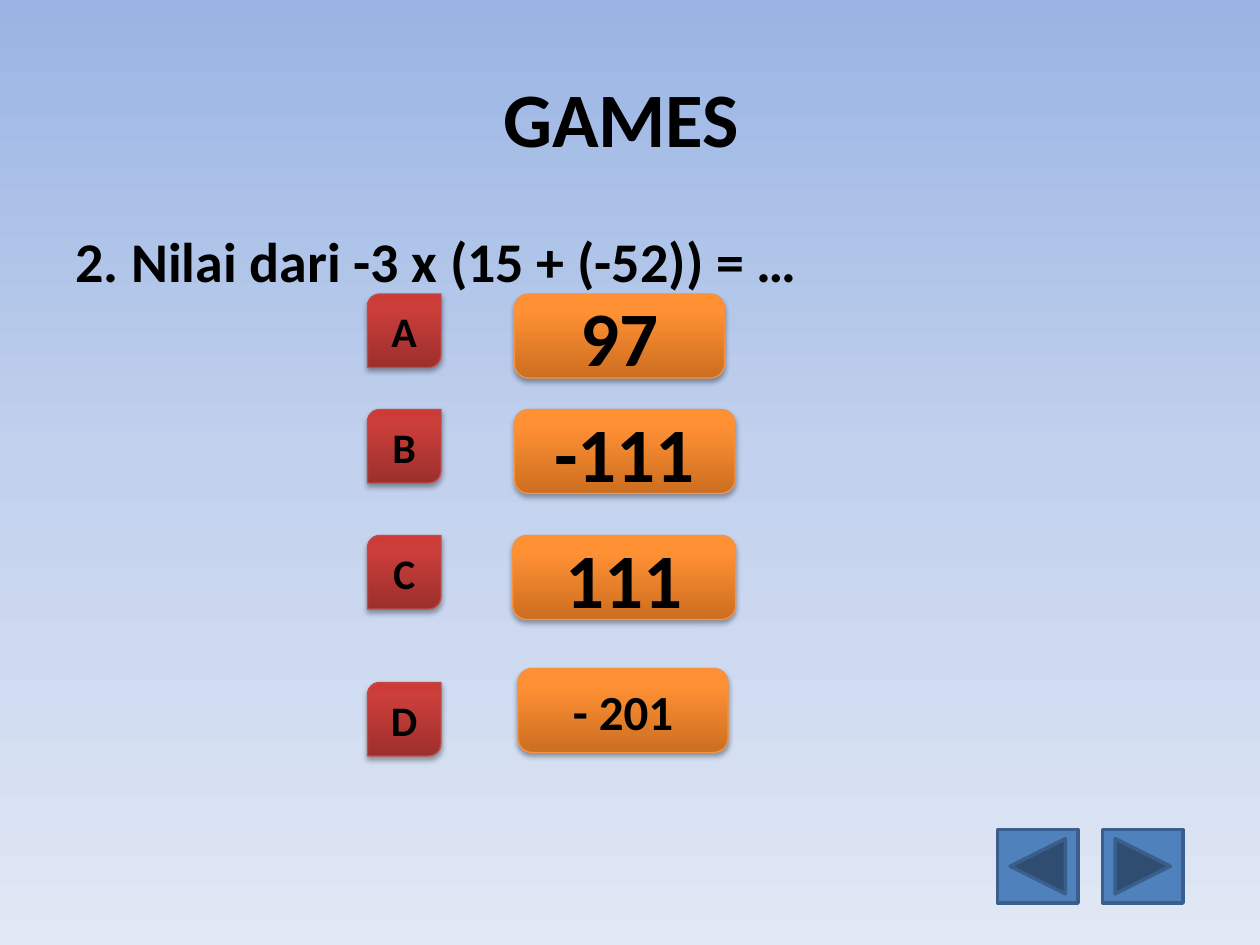
from dataclasses import dataclass

from lxml.etree import SubElement
from pptx import Presentation
from pptx.dml.color import RGBColor
from pptx.enum.shapes import MSO_SHAPE
from pptx.enum.text import MSO_ANCHOR, PP_ALIGN
from pptx.oxml.ns import qn
from pptx.util import Pt


@dataclass(frozen=True)
class Theme:
    font: str = "Calibri"
    text: str = "000000"
    sky: tuple = ((0, "9AB5E4"), (50, "C2D1ED"), (100, "E1E8F5"))
    red: tuple = ((0, "9C2F2D"), (80, "CB3E3A"), (100, "CE3B37"))
    red_line: str = "BF4C48"
    orange: tuple = ((0, "CC6E20"), (80, "FF9034"), (100, "FF9136"))
    orange_line: str = "F69240"
    nav: str = "4F81BD"
    nav_line: str = "3A5F8C"
    title: int = 44
    question: int = 32
    answer: int = 28
    letter: int = 24


T = Theme()


def add_color(parent, value):
    color = SubElement(parent, qn("a:srgbClr"))
    color.set("val", value)
    return color


def set_gradient(fill, element, stops, angle):
    fill.gradient()
    stop_list = element.find(".//" + qn("a:gsLst"))
    for old in list(stop_list):
        stop_list.remove(old)
    for pos, value in stops:
        stop = SubElement(stop_list, qn("a:gs"))
        stop.set("pos", str(pos * 1000))
        add_color(stop, value)
    element.find(".//" + qn("a:lin")).set("ang", str(angle * 60000))


def add_shadow(s):
    s.shadow.inherit = False
    effects = s._element.spPr.find(qn("a:effectLst"))
    shadow = SubElement(effects, qn("a:outerShdw"))
    for key, value in (("blurRad", Pt(3.1)), ("dist", Pt(1.8)), ("dir", 5400000), ("rotWithShape", 0)):
        shadow.set(key, str(value))
    SubElement(add_color(shadow, "000000"), qn("a:alpha")).set("val", "35000")


def write(s, text, size, align=PP_ALIGN.CENTER, anchor=MSO_ANCHOR.MIDDLE):
    tf = s.text_frame
    tf.word_wrap = True
    tf.vertical_anchor = anchor
    p = tf.paragraphs[0]
    p.alignment = align
    r = p.add_run()
    r.text = text
    r.font.name = T.font
    r.font.size = Pt(size)
    r.font.bold = True
    r.font.color.rgb = RGBColor.from_string(T.text)


def set_line(s, color, width):
    s.line.color.rgb = RGBColor.from_string(color)
    s.line.width = Pt(width)


def add_heading(slide, box, text):
    write(slide.shapes.add_textbox(*map(Pt, box)), text, T.title)


def add_question(slide, box, text):
    s = slide.shapes.add_textbox(*map(Pt, box))
    write(s, text, T.question, PP_ALIGN.LEFT, MSO_ANCHOR.TOP)
    props = s.text_frame.paragraphs[0]._p.get_or_add_pPr()
    props.set("marL", str(Pt(40)))
    props.set("indent", str(Pt(-40)))


def add_button(slide, box, kind, stops, line, text, size):
    s = slide.shapes.add_shape(kind, *map(Pt, box))
    set_gradient(s.fill, s._element.spPr, stops, 270)
    set_line(s, line, 0.75)
    add_shadow(s)
    write(s, text, size)


def add_option(slide, letter_box, answer_box, letter, answer, size):
    add_button(slide, letter_box, MSO_SHAPE.ROUND_2_DIAG_RECTANGLE,
               T.red, T.red_line, letter, T.letter)
    add_button(slide, answer_box, MSO_SHAPE.ROUNDED_RECTANGLE,
               T.orange, T.orange_line, answer, size)


def add_navigation(slide, box, gap):
    left, top, width, height = box
    button_width = (width - gap) / 2
    kinds = (MSO_SHAPE.ACTION_BUTTON_BACK_OR_PREVIOUS,
             MSO_SHAPE.ACTION_BUTTON_FORWARD_OR_NEXT)
    for i, kind in enumerate(kinds):
        s = slide.shapes.add_shape(
            kind, Pt(left + i * (button_width + gap)), Pt(top), Pt(button_width), Pt(height))
        s.fill.solid()
        s.fill.fore_color.rgb = RGBColor.from_string(T.nav)
        set_line(s, T.nav_line, 2)
        s.shadow.inherit = False


def main():
    prs = Presentation()
    prs.slide_width, prs.slide_height = Pt(720), Pt(540)
    slide = prs.slides.add_slide(prs.slide_layouts[6])
    set_gradient(slide.background.fill, slide._element, T.sky, 90)
    add_heading(slide, (36, 21.6, 648, 90), "GAMES ")
    add_question(slide, (36, 126, 648, 356.4), "2. Nilai dari -3 x (15 + (-52)) = …")
    options = (
        ("A", 168, "97", (294, 168, 120, 48), T.title),
        ("B", 234, "-111", (294, 234, 126, 48), T.title),
        ("C", 306, "111", (293, 306, 127.4, 48), T.title),
        ("D", 390, "- 201", (296, 382, 120, 48), T.answer),
    )
    for letter, top, answer, answer_box, size in options:
        add_option(slide, (210, top, 42, 42), answer_box, letter, answer, size)
    add_navigation(slide, (570, 474, 106, 42), 14)
    prs.save("out.pptx")


if __name__ == "__main__":
    main()
